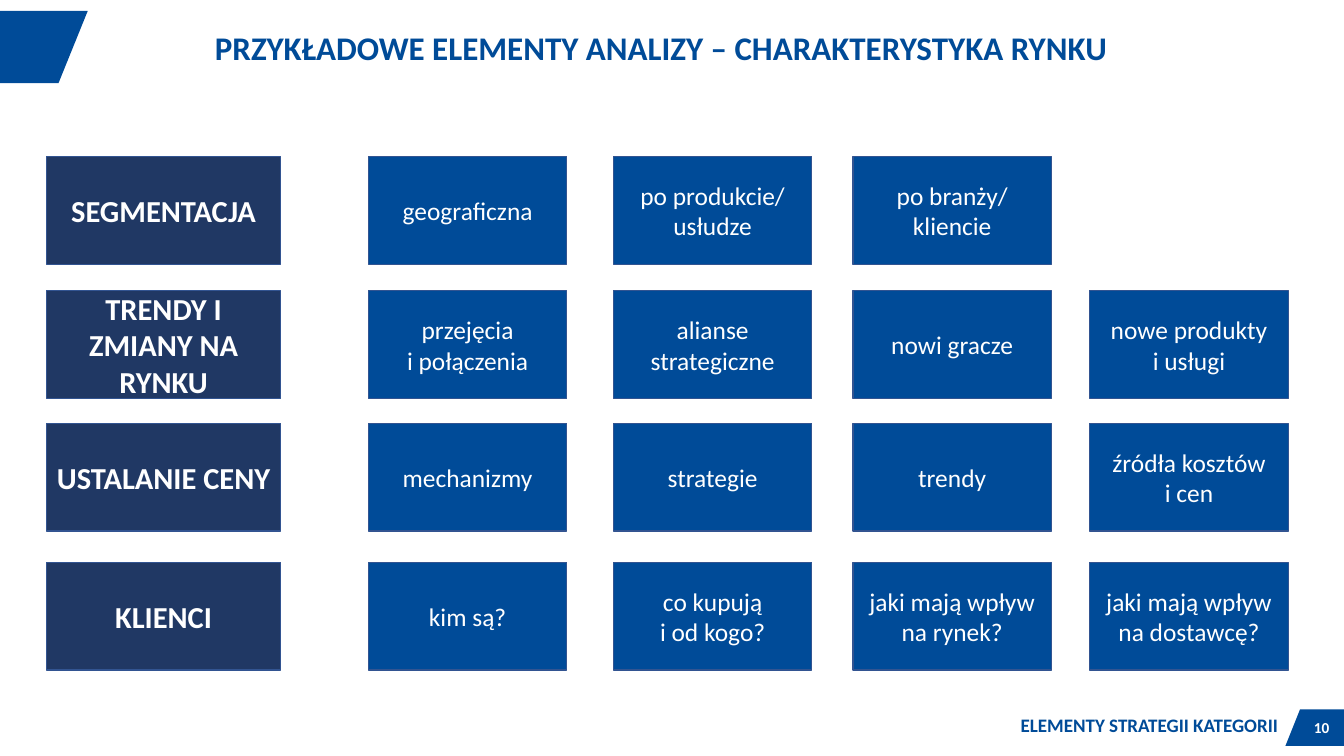
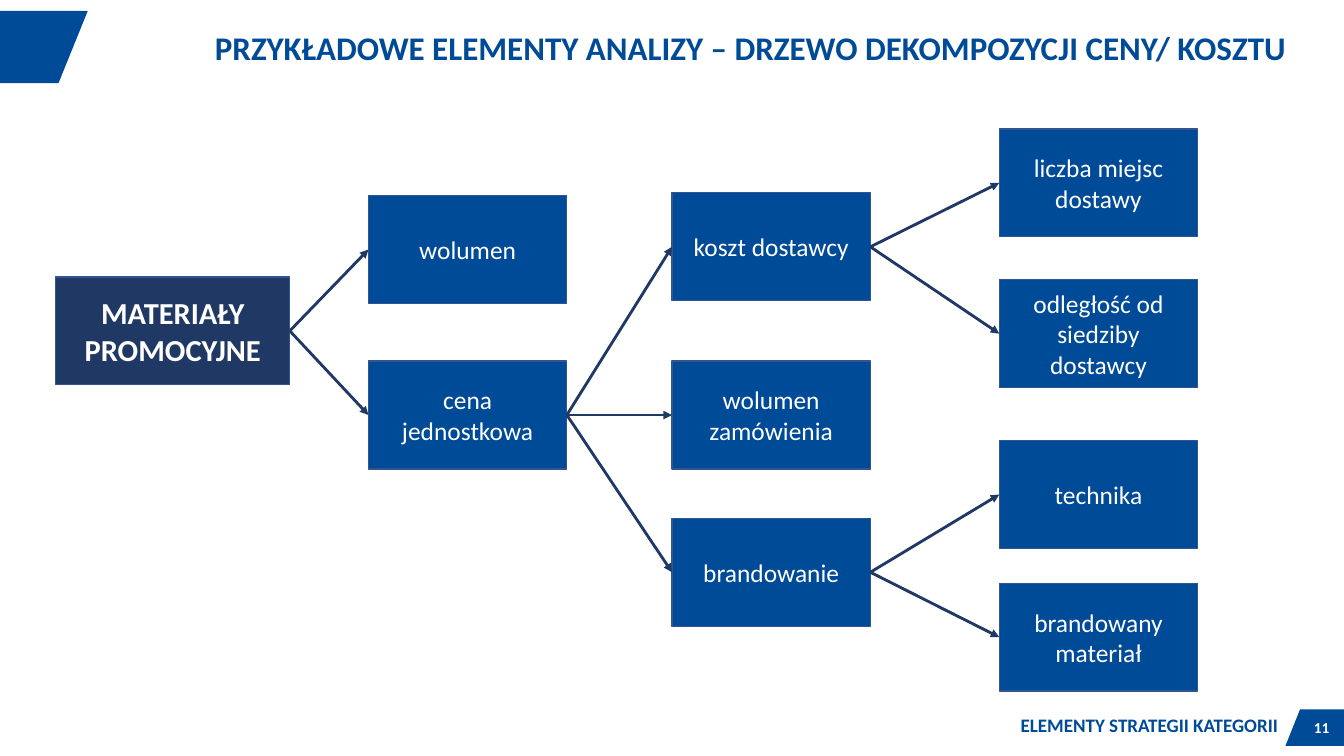
from dataclasses import dataclass

from lxml import etree
from pptx import Presentation
from pptx.dml.color import RGBColor
from pptx.enum.shapes import MSO_CONNECTOR, MSO_SHAPE
from pptx.enum.text import MSO_ANCHOR, MSO_AUTO_SIZE, PP_ALIGN
from pptx.oxml.ns import qn
from pptx.util import Pt

STRAIGHT = MSO_CONNECTOR.STRAIGHT
RECTANGLE = MSO_SHAPE.RECTANGLE
TOP, MIDDLE = MSO_ANCHOR.TOP, MSO_ANCHOR.MIDDLE
NO_AUTOFIT = MSO_AUTO_SIZE.NONE
LEFT, CENTER, RIGHT = PP_ALIGN.LEFT, PP_ALIGN.CENTER, PP_ALIGN.RIGHT

EMU_PER_PX = 9144  # 100 px to the inch
SLIDE_WIDTH, SLIDE_HEIGHT = 1470, 827
TITLE_ONLY_LAYOUT = 5
LEFT_SITE, RIGHT_SITE = 1, 3  # connection sites of a rectangle


@dataclass(frozen=True)
class Theme:
    font: str = "Calibri"
    blue: RGBColor = RGBColor(0x00, 0x4B, 0x98)
    navy: RGBColor = RGBColor(0x20, 0x38, 0x64)
    outline: RGBColor = RGBColor(0x32, 0x54, 0x91)
    white: RGBColor = RGBColor(0xFF, 0xFF, 0xFF)
    title_size: int = 26
    heading_size: int = 24
    item_size: int = 20
    footer_size: int = 15
    number_size: int = 12
    outline_width: float = 1
    arrow_width: float = 2.25


@dataclass(frozen=True)
class Area:
    left: int
    top: int
    width: int
    height: int

    def emu(self) -> tuple:
        return tuple(px(length) for length in
                     (self.left, self.top, self.width, self.height))


@dataclass(frozen=True)
class TextStyle:
    size: int
    color: RGBColor
    bold: bool = True
    align: PP_ALIGN = LEFT
    line_spacing: float = 1.0


@dataclass(frozen=True)
class BoxStyle:
    width: int
    fill: RGBColor
    text: TextStyle


@dataclass(frozen=True)
class GridRow:
    top: int
    heading: str
    items: tuple


@dataclass(frozen=True)
class TreeNode:
    text: str
    left: int
    top: int
    parent: str = ""


THEME = Theme()
TITLE_STYLE = TextStyle(THEME.title_size, THEME.blue, line_spacing=0.9)
FOOTER_STYLE = TextStyle(THEME.footer_size, THEME.blue, align=RIGHT, line_spacing=0.8)
NUMBER_STYLE = TextStyle(THEME.number_size, THEME.white, align=RIGHT)
HEADING_BOX = BoxStyle(256, THEME.navy,
                       TextStyle(THEME.heading_size, THEME.white, align=CENTER))
ITEM_BOX = BoxStyle(217, THEME.blue,
                    TextStyle(THEME.item_size, THEME.white, False, CENTER))
BOX_HEIGHT = 118

TITLE_AREA = Area(224, 30, 1218, 53)
FOOTER_AREA = Area(754, 780, 655, 32)
NUMBER_AREA = Area(1388, 781, 77, 32)
FOOTER_TEXT = "ELEMENTY STRATEGII KATEGORII"
TITLE_BAND = ((0, 12), (96, 12), (64, 91), (0, 91))
NUMBER_BAND = ((1422, 776), (1470, 776), (1470, 816), (1406, 816))

# Market analysis grid
HEADING_LEFT = 51
ITEM_LEFTS = (403, 671, 933, 1192)
MARKET_ROWS = (
    GridRow(171, "SEGMENTACJA",
            ("geograficzna", "po produkcie/ usłudze", "po branży/ kliencie")),
    GridRow(318, "TRENDY I ZMIANY NA RYNKU",
            ("przejęcia\ni połączenia", "alianse strategiczne", "nowi gracze",
             "nowe produkty\ni usługi")),
    GridRow(463, "USTALANIE CENY",
            ("mechanizmy", "strategie", "trendy", "źródła kosztów\ni cen")),
    GridRow(615, "KLIENCI",
            ("kim są?", "co kupują\ni od kogo?", "jaki mają wpływ na rynek?",
             "jaki mają wpływ na dostawcę?")),
)

# Price tree, parents before children
FACTOR_LEFT, COST_LEFT, DETAIL_LEFT = 403, 735, 1093
PRICE_TREE = (
    TreeNode("MATERIAŁY PROMOCYJNE", 61, 303),
    TreeNode("wolumen", FACTOR_LEFT, 214, "MATERIAŁY PROMOCYJNE"),
    TreeNode("cena jednostkowa", FACTOR_LEFT, 395, "MATERIAŁY PROMOCYJNE"),
    TreeNode("koszt dostawcy", COST_LEFT, 211, "cena jednostkowa"),
    TreeNode("wolumen zamówienia", COST_LEFT, 395, "cena jednostkowa"),
    TreeNode("brandowanie", COST_LEFT, 567, "cena jednostkowa"),
    TreeNode("liczba miejsc dostawy", DETAIL_LEFT, 141, "koszt dostawcy"),
    TreeNode("odległość od siedziby dostawcy", DETAIL_LEFT, 306, "koszt dostawcy"),
    TreeNode("technika", DETAIL_LEFT, 482, "brandowanie"),
    TreeNode("brandowany materiał", DETAIL_LEFT, 638, "brandowanie"),
)


def px(length: int) -> int:
    return length * EMU_PER_PX


def write_text(shape, text: str, style: TextStyle, anchor: MSO_ANCHOR = TOP) -> None:
    frame = shape.text_frame
    frame.word_wrap = True
    frame.auto_size = NO_AUTOFIT
    frame.vertical_anchor = anchor
    paragraph = frame.paragraphs[0]
    paragraph.text = text
    paragraph.alignment = style.align
    paragraph.line_spacing = style.line_spacing
    font = paragraph.font
    font.name = THEME.font
    font.size = Pt(style.size)
    font.bold = style.bold
    font.color.rgb = style.color


def set_text_margins(shape) -> None:
    frame = shape.text_frame
    frame.margin_left = frame.margin_right = px(11)
    frame.margin_top = frame.margin_bottom = px(5)


def add_label(slide, area: Area, text: str, style: TextStyle) -> None:
    label = slide.shapes.add_textbox(*area.emu())
    set_text_margins(label)
    write_text(label, text, style)


def add_band(slide, corners: tuple) -> None:
    builder = slide.shapes.build_freeform(*corners[0], scale=EMU_PER_PX)
    builder.add_line_segments(corners[1:], close=True)
    band = builder.convert_to_shape()
    band.shadow.inherit = False
    band.fill.solid()
    band.fill.fore_color.rgb = THEME.blue
    band.line.fill.background()


def add_framed_slide(presentation, title_text: str, number: int):
    """Add a slide with its title, bands, footer and page number."""
    slide = presentation.slides.add_slide(presentation.slide_layouts[TITLE_ONLY_LAYOUT])
    for corners in (TITLE_BAND, NUMBER_BAND):
        add_band(slide, corners)
    title = slide.shapes.title
    title.left, title.top, title.width, title.height = TITLE_AREA.emu()
    set_text_margins(title)
    write_text(title, title_text, TITLE_STYLE)
    add_label(slide, FOOTER_AREA, FOOTER_TEXT, FOOTER_STYLE)
    add_label(slide, NUMBER_AREA, str(number), NUMBER_STYLE)
    return slide


def add_box(slide, left: int, top: int, text: str, style: BoxStyle):
    area = Area(left, top, style.width, BOX_HEIGHT)
    box = slide.shapes.add_shape(RECTANGLE, *area.emu())
    box.shadow.inherit = False
    box.fill.solid()
    box.fill.fore_color.rgb = style.fill
    box.line.color.rgb = THEME.outline
    box.line.width = Pt(THEME.outline_width)
    write_text(box, text, style.text, MIDDLE)
    return box


def add_arrow(slide, parent, child) -> None:
    arrow = slide.shapes.add_connector(
        STRAIGHT, parent.left + parent.width, parent.top + parent.height // 2,
        child.left, child.top + child.height // 2)
    arrow.begin_connect(parent, RIGHT_SITE)
    arrow.end_connect(child, LEFT_SITE)
    arrow.line.color.rgb = THEME.navy
    arrow.line.width = Pt(THEME.arrow_width)
    properties = arrow._element.spPr
    etree.SubElement(properties.find(qn("a:ln")), qn("a:tailEnd"), type="triangle")
    etree.SubElement(properties, qn("a:effectLst"))


def draw_market_grid(slide) -> None:
    for row in MARKET_ROWS:
        add_box(slide, HEADING_LEFT, row.top, row.heading, HEADING_BOX)
        for left, item in zip(ITEM_LEFTS, row.items):
            add_box(slide, left, row.top, item, ITEM_BOX)


def draw_price_tree(slide) -> None:
    boxes = {}
    for node in PRICE_TREE:
        style = ITEM_BOX if node.parent else HEADING_BOX
        boxes[node.text] = add_box(slide, node.left, node.top, node.text, style)
    for node in PRICE_TREE:
        if node.parent:
            add_arrow(slide, boxes[node.parent], boxes[node.text])


def main() -> None:
    presentation = Presentation()
    presentation.slide_width = px(SLIDE_WIDTH)
    presentation.slide_height = px(SLIDE_HEIGHT)
    draw_market_grid(add_framed_slide(
        presentation, "PRZYKŁADOWE ELEMENTY ANALIZY – CHARAKTERYSTYKA RYNKU", 10))
    draw_price_tree(add_framed_slide(
        presentation,
        "PRZYKŁADOWE ELEMENTY ANALIZY – DRZEWO DEKOMPOZYCJI CENY/ KOSZTU", 11))
    presentation.save("out.pptx")


if __name__ == "__main__":
    main()
